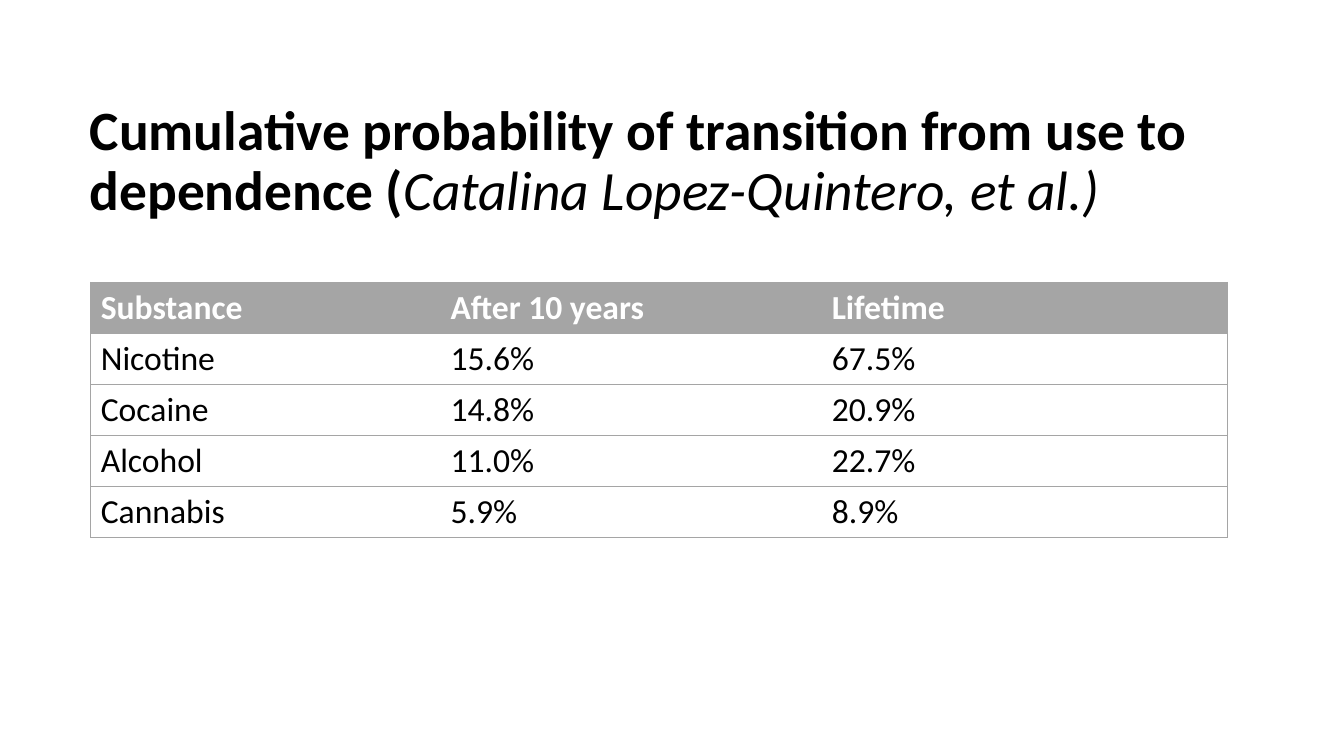
from lxml import etree
from pptx import Presentation
from pptx.dml.color import RGBColor
from pptx.enum.text import MSO_ANCHOR, PP_ALIGN
from pptx.oxml.ns import qn
from pptx.util import Inches, Pt

BLACK = RGBColor(0x00, 0x00, 0x00)
WHITE = RGBColor(0xFF, 0xFF, 0xFF)
GRAY = RGBColor(0xA5, 0xA5, 0xA5)
MIDDLE = MSO_ANCHOR.MIDDLE
LEFT = PP_ALIGN.LEFT
FONT_NAME = "Calibri"
TITLE_ONLY_LAYOUT = 5


def format_run(run, size, color, bold, italic=False):
    run.font.name = FONT_NAME
    run.font.size = Pt(size)
    run.font.color.rgb = color
    run.font.bold = bold
    run.font.italic = italic


def add_border(cell, side, visible):
    properties = cell._tc.get_or_add_tcPr()
    line = etree.SubElement(properties, qn(f"a:ln{side}"), w=str(Pt(0.5)))
    if visible:
        fill = etree.SubElement(line, qn("a:solidFill"))
        etree.SubElement(fill, qn("a:srgbClr"), val=str(GRAY))
    else:
        etree.SubElement(line, qn("a:noFill"))


presentation = Presentation()
presentation.slide_width = Inches(13.33)
presentation.slide_height = Inches(7.5)
slide = presentation.slides.add_slide(presentation.slide_layouts[TITLE_ONLY_LAYOUT])

title = slide.shapes.title
title.left, title.top = Inches(0.79), Inches(0.89)
title.width, title.height = Inches(11.5), Inches(1.45)
title.text_frame.word_wrap = True
title.text_frame.vertical_anchor = MIDDLE
title_paragraph = title.text_frame.paragraphs[0]
title_paragraph.alignment = LEFT
title_paragraph.line_spacing = 0.9
heading = title_paragraph.add_run()
heading.text = "Cumulative probability of transition from use to dependence ("
format_run(heading, 39.6, BLACK, True)
authors = title_paragraph.add_run()
authors.text = "Catalina Lopez-Quintero, et al.)"
format_run(authors, 39.6, BLACK, False, True)

table_rows = [
    ("Substance", "After 10 years", "Lifetime"),
    ("Nicotine", "15.6%", "67.5%"),
    ("Cocaine", "14.8%", "20.9%"),
    ("Alcohol", "11.0%", "22.7%"),
    ("Cannabis", "5.9%", "8.9%"),
]
column_widths = [3.47, 3.78, 4.02]
last_column = len(column_widths) - 1

table = slide.shapes.add_table(
    len(table_rows), len(column_widths),
    Inches(0.9), Inches(2.8), Inches(sum(column_widths)), Inches(2.5),
).table
table.horz_banding = False
for column, width in zip(table.columns, column_widths):
    column.width = Inches(width)

for row_index, row_values in enumerate(table_rows):
    is_header = row_index == 0
    for column_index, value in enumerate(row_values):
        cell = table.cell(row_index, column_index)
        cell.text_frame.text = value
        run = cell.text_frame.paragraphs[0].runs[0]
        format_run(run, 24, WHITE if is_header else BLACK, is_header)
        add_border(cell, "L", column_index == 0)
        add_border(cell, "R", column_index == last_column)
        add_border(cell, "T", True)
        add_border(cell, "B", True)
        cell.fill.solid()
        cell.fill.fore_color.rgb = GRAY if is_header else WHITE

presentation.save("out.pptx")
